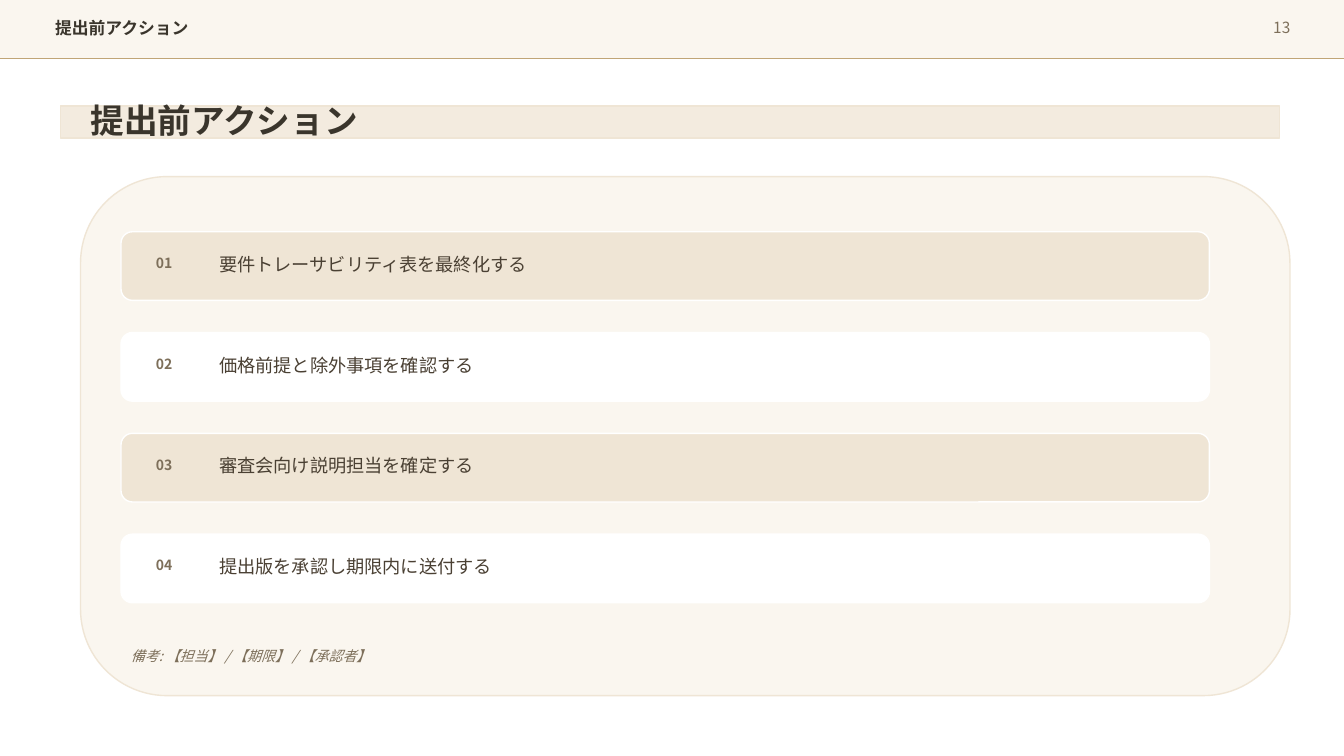
from lxml.etree import SubElement
from pptx import Presentation
from pptx.dml.color import RGBColor
from pptx.enum.shapes import MSO_CONNECTOR as Connector, MSO_SHAPE as Shape
from pptx.enum.text import MSO_ANCHOR as Anchor, MSO_AUTO_SIZE as AutoSize, PP_ALIGN as Align
from pptx.oxml.ns import qn
from pptx.util import Cm, Pt

WIDTH, HEIGHT = 33.87, 19.05
HEADER_HEIGHT = 1.47
ROW_TOP, ROW_PITCH = 5.84, 2.54
ACTIONS = [
    "要件トレーサビリティ表を最終化する",
    "価格前提と除外事項を確認する",
    "審査会向け説明担当を確定する",
    "提出版を承認し期限内に送付する",
]


def color(value):
    return RGBColor.from_string(value)


class ActionSlide:
    FONT = "Noto Sans CJK JP"
    TITLE_FONT = "Times New Roman"
    INK, BODY, MUTED = "3A352C", "4A4033", "7D6F5A"
    CREAM, SAND, GOLD, WHITE = "FAF6EF", "EFE5D5", "C0A577", "FFFFFF"

    def __init__(self, presentation):
        self.slide = presentation.slides.add_slide(presentation.slide_layouts[5])
        self.shapes = self.slide.shapes

    def box(self, kind, left, top, width, height, fill, line, opacity=None):
        shape = self.shapes.add_shape(kind, Cm(left), Cm(top), Cm(width), Cm(height))
        shape.shadow.inherit = False
        shape.fill.solid()
        shape.fill.fore_color.rgb = color(fill)
        shape.line.color.rgb = color(line)
        shape.line.width = Pt(1)
        if opacity is not None:
            solid_color = shape._element.spPr.find(qn("a:solidFill"))[0]
            SubElement(solid_color, qn("a:alpha"), val=str(opacity * 1000))

    def rule(self, top, line):
        connector = self.shapes.add_connector(
            Connector.STRAIGHT, 0, Cm(top), Cm(WIDTH), Cm(top))
        connector.line.color.rgb = color(line)
        connector.line.width = Pt(1)
        SubElement(connector._element.spPr, qn("a:effectLst"))

    def set_text(self, shape, text, size, ink, bold=False, italic=False,
                 align=Align.LEFT, font_name=FONT):
        frame = shape.text_frame
        frame.word_wrap = True
        frame.auto_size = AutoSize.NONE
        frame.vertical_anchor = Anchor.MIDDLE
        paragraph = frame.paragraphs[0]
        paragraph.alignment = align
        run = paragraph.add_run()
        run.text = text
        font = run.font
        font.name, font.size = font_name, Pt(size)
        font.bold, font.italic = bold, italic
        font.color.rgb = color(ink)
        SubElement(run._r.get_or_add_rPr(), qn("a:ea"), typeface=self.FONT)

    def text(self, left, top, width, height, *content, **style):
        shape = self.shapes.add_textbox(Cm(left), Cm(top), Cm(width), Cm(height))
        self.set_text(shape, *content, **style)

    def title(self, left, top, width, height, text):
        title = self.shapes.title
        title.left, title.top = Cm(left), Cm(top)
        title.width, title.height = Cm(width), Cm(height)
        self.set_text(title, text, 24, self.INK, bold=True, font_name=self.TITLE_FONT)
        self.shapes._spTree.append(title._element)

    def action(self, index, text):
        top = ROW_TOP + index * ROW_PITCH
        fill = self.WHITE if index % 2 else self.SAND
        self.box(Shape.ROUNDED_RECTANGLE, 3.05, top, 27.43, 1.73, fill, self.WHITE)
        self.text(3.68, top + 0.53, 1.12, 0.51, f"{index + 1:02}", 10, self.MUTED, bold=True)
        self.text(5.28, top + 0.51, 24.38, 0.61, text, 13, self.BODY)


def main():
    presentation = Presentation()
    presentation.slide_width, presentation.slide_height = Cm(WIDTH), Cm(HEIGHT)
    page = ActionSlide(presentation)

    page.box(Shape.RECTANGLE, 1.52, 2.67, 30.73, 0.81, page.SAND, page.SAND, opacity=75)
    page.box(Shape.RECTANGLE, 0, 0, WIDTH, HEADER_HEIGHT, page.CREAM, page.CREAM)
    page.rule(HEADER_HEIGHT, page.GOLD)
    page.text(1.14, 0.38, 23.62, 0.66, "提出前アクション", 12, page.INK, bold=True)
    page.text(30.99, 0.36, 1.78, 0.66, "13", 11, page.MUTED, align=Align.RIGHT)
    page.title(2.03, 2.41, 28.96, 1.22, "提出前アクション")

    page.box(Shape.ROUNDED_RECTANGLE, 2.03, 4.45, 30.48, 13.08, page.CREAM, page.SAND)
    for index, action in enumerate(ACTIONS):
        page.action(index, action)
    page.text(3.05, 16.26, 17.27, 0.56, "備考: 【担当】 / 【期限】 / 【承認者】",
              10, page.MUTED, italic=True)

    presentation.save("out.pptx")


if __name__ == "__main__":
    main()
